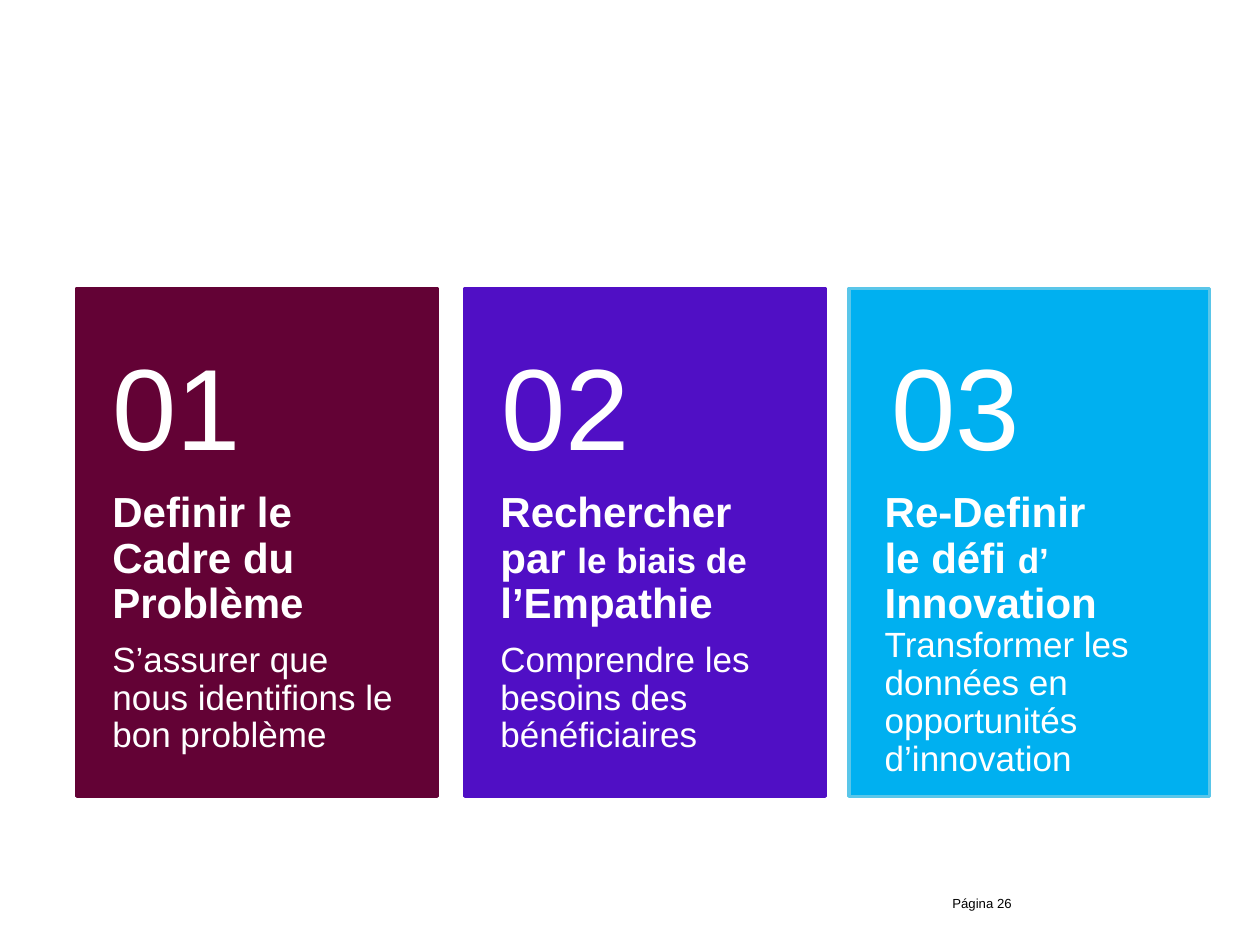
from pptx import Presentation
from pptx.dml.color import RGBColor
from pptx.enum.shapes import MSO_SHAPE as Shape
from pptx.enum.text import MSO_ANCHOR as Anchor
from pptx.util import Pt

COLORS = {
    "white": "FFFFFF",
    "black": "000000",
    "burgundy": "630235",
    "violet": "500FC5",
    "sky": "00B0F0",
    "sky_edge": "5AC6E9",
}
FONT = "Arial"
CARD_TOP, CARD_WIDTH, CARD_HEIGHT = 164.9, 205.9, 290.2
NUMBER_TOP, NUMBER_HEIGHT = 186.5, 98.6
BODY_TOP, BODY_HEIGHT = 280.8, 174.2
HEADING, DETAIL = 24, 20

# Each card: left, number left, fill, edge, number, space after, heading lines, detail
CARDS = [
    (43.9, 43.9, "burgundy", "burgundy", "01", 8.4,
     [[("Definir le Cadre du Problème", HEADING)]],
     "S’assurer que nous identifions le bon problème"),
    (265.7, 266.4, "violet", "violet", "02", 8.4,
     [[("Rechercher par ", HEADING), ("le biais de ", DETAIL), ("l’Empathie", HEADING)]],
     "Comprendre les besoins des bénéficiaires"),
    (485.3, 488.9, "sky", "sky_edge", "03", 0,
     [[("Re-Definir", HEADING)],
      [("le défi ", HEADING), ("d’ ", DETAIL), ("Innovation", HEADING)]],
     "Transformer les données en opportunités d’innovation"),
]


def rgb(name):
    """Return the named colour."""
    return RGBColor.from_string(COLORS[name])


def add_panel(slide, left, fill, edge):
    """Add the coloured rectangle of a card."""
    panel = slide.shapes.add_shape(
        Shape.RECTANGLE, Pt(left), Pt(CARD_TOP), Pt(CARD_WIDTH), Pt(CARD_HEIGHT))
    panel.shadow.inherit = False
    panel.fill.solid()
    panel.fill.fore_color.rgb = rgb(fill)
    panel.line.color.rgb = rgb(edge)
    panel.line.width = Pt(2)


def add_box(slide, left, top, width, height, insets, anchor=Anchor.TOP):
    """Add a wrapping text box and return its text frame."""
    frame = slide.shapes.add_textbox(Pt(left), Pt(top), Pt(width), Pt(height)).text_frame
    frame.word_wrap = True
    frame.vertical_anchor = anchor
    frame.margin_left, frame.margin_top, frame.margin_right, frame.margin_bottom = map(Pt, insets)
    return frame


def write_paragraph(paragraph, runs, color="white", bold=False, spacing=0.9, after=0):
    """Fill a paragraph with (text, size) runs."""
    for text, size in runs:
        run = paragraph.add_run()
        run.text = text
        if len(runs) > 1:
            run.font.size = Pt(size)
    font = paragraph.font
    font.name, font.size, font.bold = FONT, Pt(runs[0][1]), bold
    font.color.rgb = rgb(color)
    paragraph.line_spacing = spacing
    paragraph.space_after = Pt(after)


def add_card(slide, left, number_left, fill, edge, number, after, headings, detail):
    """Add one numbered step with its heading and detail."""
    add_panel(slide, left, fill, edge)
    body = add_box(slide, left, BODY_TOP, CARD_WIDTH, BODY_HEIGHT, (20.3, 0, 20.3, 26))
    paragraph = body.paragraphs[0]
    for runs in headings:
        write_paragraph(paragraph, runs, bold=True, after=after)
        paragraph = body.add_paragraph()
    write_paragraph(paragraph, [(detail, DETAIL)], after=after)
    frame = add_box(slide, number_left, NUMBER_TOP, CARD_WIDTH, NUMBER_HEIGHT,
                    (20.3, 13, 20.3, 13), Anchor.MIDDLE)
    write_paragraph(frame.paragraphs[0], [(number, 66)])


def main():
    """Build and save the slide."""
    presentation = Presentation()
    presentation.slide_width, presentation.slide_height = Pt(720), Pt(540)
    slide = presentation.slides.add_slide(presentation.slide_layouts[6])
    for card in CARDS:
        add_card(slide, *card)
    footer = add_box(slide, 537.1, 508.3, 96.5, 13, (7.2, 3.6, 7.2, 0))
    write_paragraph(footer.paragraphs[0], [("Página 26", 7.5)], color="black", spacing=1.0)
    presentation.save("out.pptx")


if __name__ == "__main__":
    main()
